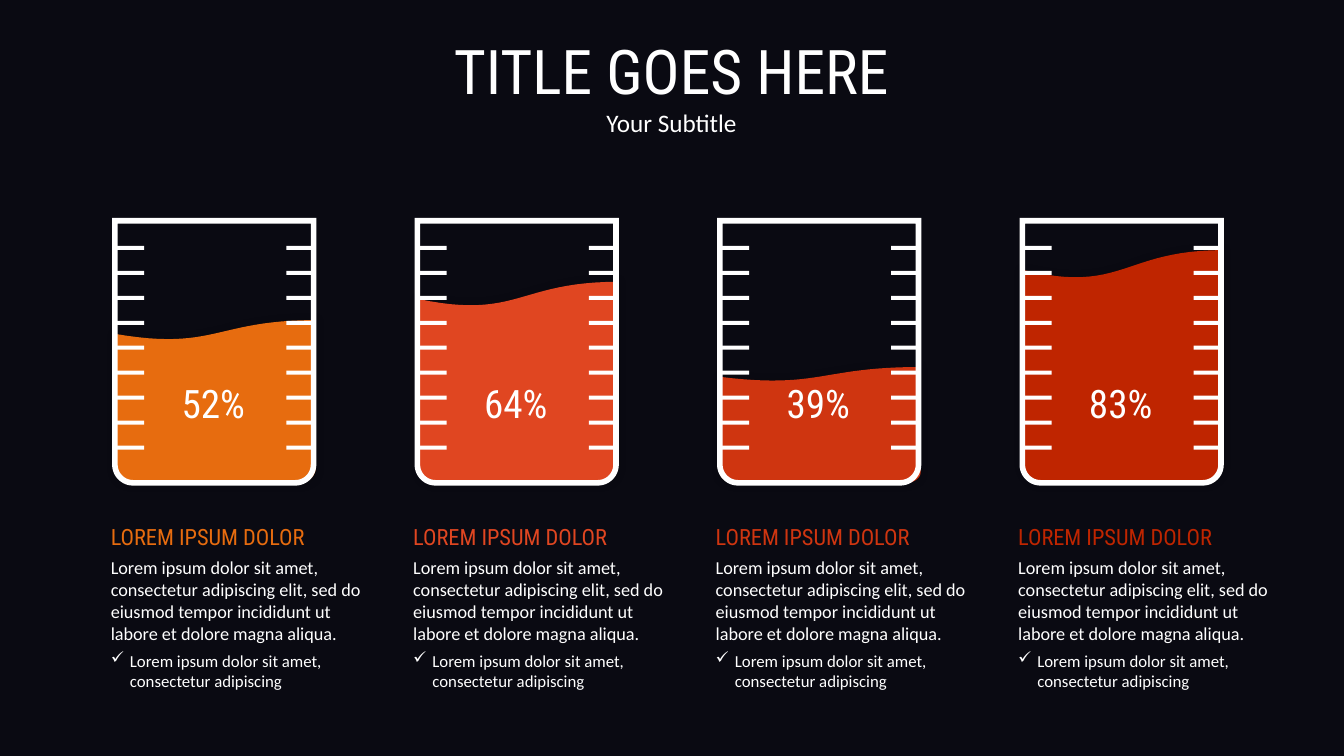
from lxml import etree
from pptx import Presentation
from pptx import util as u
from pptx.dml.color import RGBColor
from pptx.enum import text
from pptx.oxml.ns import qn

COLORS = {
    "background": "0A0A12",
    "white": "FFFFFF",
    "shadow": "000000",
    "orange": "E76C0F",
    "coral": "E04621",
    "red": "CF3510",
    "dark_red": "BF2500",
}
HEADING_FONT = "Roboto Condensed"
BODY_FONT = "Calibri"
BEAKERS = [("52%", "orange", 3.09), ("64%", "coral", 2.69),
           ("39%", "red", 3.58), ("83%", "dark_red", 2.36)]
COLUMN_STEP = 3
LIQUID_BOTTOM = 4.8
TICK_COUNT = 9
BODY = ("Lorem ipsum dolor sit amet, consectetur adipiscing elit, sed do "
        "eiusmod tempor incididunt ut labore et dolore magna aliqua.")
POINT = "Lorem ipsum dolor sit amet, consectetur adipiscing"


def curve(start, control_a, control_b, end, steps=24):
    points = []
    for step in range(steps + 1):
        t = step / steps
        weights = ((1 - t) ** 3, 3 * t * (1 - t) ** 2, 3 * t ** 2 * (1 - t), t ** 3)
        points.append(tuple(
            sum(w * p[axis] for w, p in zip(weights, (start, control_a, control_b, end)))
            for axis in (0, 1)))
    return points


def rounded_base(left, right, bottom, radius_x, radius_y):
    side = bottom - radius_y
    handle = bottom - 0.45 * radius_y
    inner_right, inner_left = right - radius_x, left + radius_x
    return (curve((right, side), (right, handle),
                  (right - 0.45 * radius_x, bottom), (inner_right, bottom))
            + curve((inner_left, bottom), (left + 0.45 * radius_x, bottom),
                    (left, handle), (left, side)))


class BeakerSlide:
    def __init__(self, slide):
        self.slide = slide
        background = slide.background.fill
        background.solid()
        background.fore_color.rgb = self.color("background")

    def color(self, name):
        return RGBColor.from_string(COLORS[name])

    def outline(self, shapes, contours, fill=None, line=None):
        builder = None
        for contour in contours:
            points = [(u.Inches(x), u.Inches(y)) for x, y in contour]
            if builder is None:
                builder = shapes.build_freeform(*points[0])
            else:
                builder.move_to(*points[0])
            builder.add_line_segments(points[1:], close=True)
        shape = builder.convert_to_shape()
        shape.shadow.inherit = False
        if fill:
            shape.fill.solid()
            shape.fill.fore_color.rgb = self.color(fill)
        else:
            shape.fill.background()
        if line:
            shape.line.color.rgb = self.color(line)
            shape.line.width = u.Pt(4)
            stroke = shape.element.spPr.find(qn("a:ln"))
            etree.SubElement(stroke, qn("a:miter"), lim="800000")
        else:
            shape.line.fill.background()
        return shape

    def textbox(self, left, top, width, height, paragraphs, centered=False, inset=True):
        frame = self.slide.shapes.add_textbox(
            *map(u.Inches, (left, top, width, height))).text_frame
        frame.word_wrap = True
        frame.auto_size = text.MSO_AUTO_SIZE.SHAPE_TO_FIT_TEXT
        if not inset:
            frame.margin_left = frame.margin_right = 0
            frame.margin_top = frame.margin_bottom = 0
        for index, (words, size, font, color, before, bullet) in enumerate(paragraphs):
            paragraph = frame.add_paragraph() if index else frame.paragraphs[0]
            paragraph.text = words
            if centered:
                paragraph.alignment = text.PP_ALIGN.CENTER
            if before:
                paragraph.space_before = u.Pt(before)
            if bullet:
                properties = paragraph._p.get_or_add_pPr()
                properties.set("marL", str(u.Inches(0.19)))
                properties.set("indent", str(u.Inches(-0.19)))
                etree.SubElement(properties, qn("a:buChar"), char=bullet)
            paragraph.font.size = u.Pt(size)
            paragraph.font.name = font
            paragraph.font.color.rgb = self.color(color)

    def liquid(self, x, top, color):
        depth = LIQUID_BOTTOM - top
        left, right = x + 0.14, x + 2.13
        crest = top + 0.05 * depth
        middle = (left + right) / 2
        surface = curve((left, top + 0.13 * depth), (middle, top + 0.23 * depth),
                        (middle, crest), (right, crest))
        base = rounded_base(left, right, LIQUID_BOTTOM, 0.19, 0.09 * depth)
        shape = self.outline(self.slide.shapes, [[(right, top)] + base + surface], color)
        effects = shape.element.spPr.find(qn("a:effectLst"))
        shadow = etree.SubElement(effects, qn("a:outerShdw"), blurRad=str(u.Pt(6)),
                                  dist="0", dir="13500000")
        tint = etree.SubElement(shadow, qn("a:srgbClr"), val=COLORS["shadow"])
        etree.SubElement(tint, qn("a:alpha"), val="20000")

    def glass(self, x):
        group = self.slide.shapes.add_group_shape().shapes
        left, right, top = x + 0.14, x + 2.11, 2.19
        wall = [(left, top), (right, top)] + rounded_base(left, right, 4.79, 0.18, 0.18)
        self.outline(group, [wall], line="white")
        for tick in range(TICK_COUNT):
            upper = 2.44 + tick * 1.98 / (TICK_COUNT - 1)
            lower = upper + 0.04
            marks = [[(start, upper), (end, upper), (end, lower), (start, lower)]
                     for start, end in ((x + 2.84 - 1, x + 2.13), (x + 0.13, x + 0.43))]
            self.outline(group, marks, fill="white")

    def column(self, x, percent, color, level):
        self.liquid(x, level, color)
        self.glass(x)
        self.textbox(x + 0.74, 3.76, 0.75, 0.47,
                     [(percent, 28, HEADING_FONT, "white", 0, None)],
                     centered=True, inset=False)
        self.textbox(x, 5.14, 2.78, 1.78, [
            ("LOREM IPSUM DOLOR", 16, HEADING_FONT, color, 0, None),
            (BODY, 13, BODY_FONT, "white", 4.6, None),
            (POINT, 12, BODY_FONT, "white", 4.9, "✓"),
        ])


def main():
    presentation = Presentation()
    presentation.slide_width = u.Inches(13.33)
    presentation.slide_height = u.Inches(7.5)
    page = BeakerSlide(presentation.slides.add_slide(presentation.slide_layouts[6]))
    page.textbox(3.65, 0.28, 6.02, 1.14, [
        ("TITLE GOES HERE", 44, HEADING_FONT, "white", 0, None),
        ("Your Subtitle", 18, BODY_FONT, "white", 0, None),
    ], centered=True)
    for index, (percent, color, level) in enumerate(BEAKERS):
        page.column(1 + index * COLUMN_STEP, percent, color, level)
    presentation.save("out.pptx")


if __name__ == "__main__":
    main()
